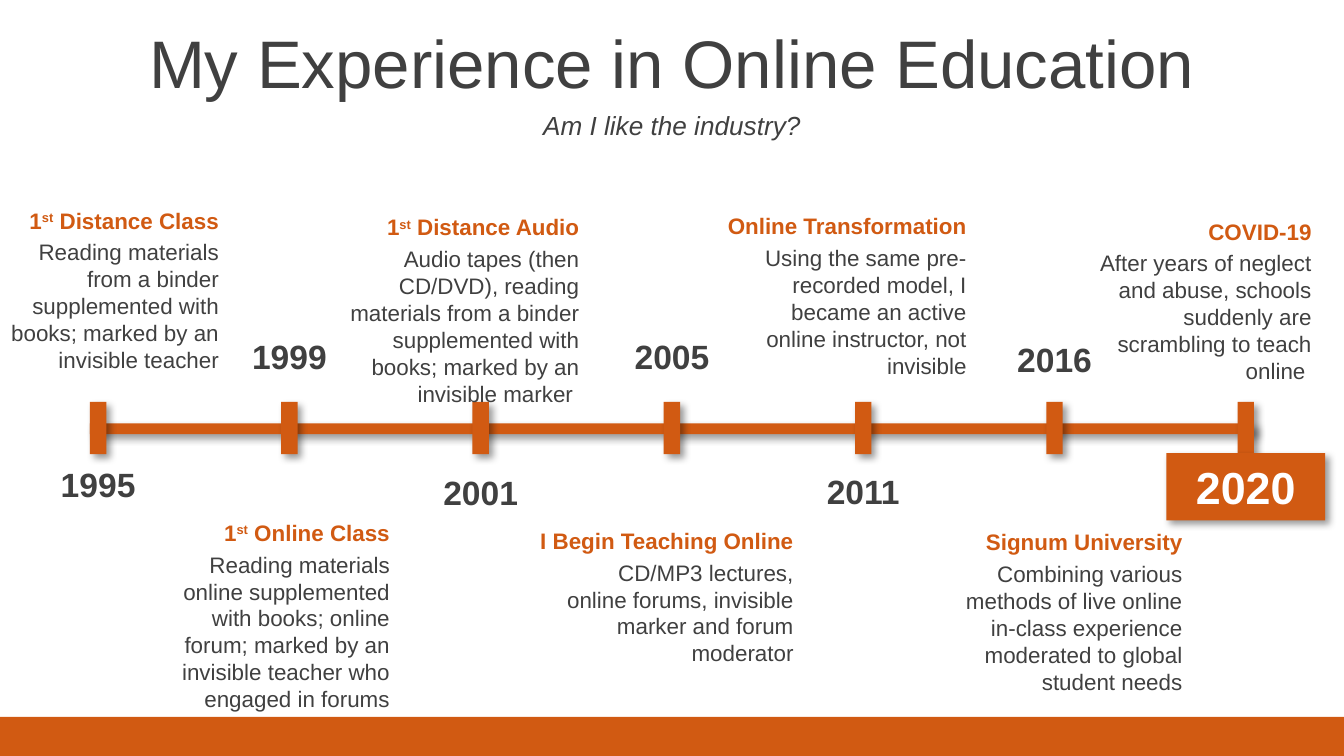
import dataclasses

import lxml.etree
import pptx
import pptx.dml.color
import pptx.enum.shapes
import pptx.enum.text
import pptx.oxml.ns
import pptx.util

Cm = pptx.util.Cm
Pt = pptx.util.Pt
ALIGN = pptx.enum.text.PP_ALIGN
ANCHOR = pptx.enum.text.MSO_ANCHOR
AUTO_SIZE = pptx.enum.text.MSO_AUTO_SIZE

ORANGE = pptx.dml.color.RGBColor(0xD1, 0x5A, 0x12)
GRAY = pptx.dml.color.RGBColor(0x40, 0x40, 0x40)
WHITE = pptx.dml.color.RGBColor(0xFF, 0xFF, 0xFF)

# Formats of the kinds of text
TITLE = {"size": Pt(36), "color": GRAY, "bold": False}
SUBTITLE = {"size": Pt(14), "color": GRAY, "italic": True}
YEAR = {"size": Pt(18), "color": GRAY, "bold": True}
CURRENT_YEAR = {"size": Pt(24), "color": WHITE, "bold": True}
HEADING = {"size": Pt(12), "color": ORANGE, "bold": True}
DESCRIPTION = {"size": Pt(12), "color": GRAY}

# Slide and timeline measures in centimetres
SLIDE_WIDTH, SLIDE_HEIGHT = 25.4, 14.28
FOOTER_TOP = 13.54
FIRST_TICK, LAST_TICK = 1.7, 23.39
TICK_TOP, TICK_WIDTH, TICK_HEIGHT = 7.59, 0.31, 0.99
BAR_TOP, BAR_HEIGHT = 8.0, 0.2
YEAR_WIDTH, YEAR_HEIGHT = 2.26, 1.02
HEADING_HEIGHT, HEADING_STEP = 0.76, 0.6
LINE_HEIGHT, TEXT_MARGIN = 0.51, 0.27


@dataclasses.dataclass
class Event:
    year: str
    year_top: float
    heading: str
    description: str
    right: float
    top: float
    lines: int
    width: float = 5.03
    heading_width: float = 5.03


# A caret encloses superscript text in a heading
EVENTS = [
    Event("1995", 8.64, "1^st^ Distance Class",
          "Reading materials from a binder supplemented with books; "
          "marked by an invisible teacher", 4.39, 3.78, 5, 4.78, 4.78),
    Event("1999", 6.22, "1^st^ Online Class",
          "Reading materials online supplemented with books; online forum; "
          "marked by an invisible teacher who engaged in forums", 7.62, 9.68, 6),
    Event("2001", 8.79, "1^st^ Distance Audio",
          "Audio tapes (then CD/DVD), reading materials from a binder "
          "supplemented with books; marked by an invisible marker ", 11.2, 3.91, 6),
    Event("2005", 6.22, "I Begin Teaching Online",
          "CD/MP3 lectures, online forums, invisible marker and forum moderator",
          15.25, 9.83, 4, heading_width=5.38),
    Event("2011", 8.76, "Online Transformation",
          "Using the same pre-recorded model, I became an active online "
          "instructor, not invisible", 18.52, 3.89, 5, heading_width=5.26),
    Event("2016", 6.27, "Signum University",
          "Combining various methods of live online in-class experience "
          "moderated to global student needs", 22.6, 9.86, 5, heading_width=5.38),
    Event("2020", 8.56, "COVID-19",
          "After years of neglect and abuse, schools suddenly are scrambling "
          "to teach online ", 25.04, 3.99, 5),
]


def write_text(shape, text, style, alignment, anchor, auto_size):
    frame = shape.text_frame
    for name, value in {"word_wrap": True, "auto_size": auto_size,
                        "vertical_anchor": anchor}.items():
        setattr(frame, name, value)
    paragraph = frame.paragraphs[0]
    paragraph.alignment = alignment
    paragraph.space_before = Pt(0)
    for index, part in enumerate(text.split("^")):
        run = paragraph.add_run()
        run.text = part
        run.font.name = "Arial"
        for name, value in style.items():
            if name == "color":
                run.font.color.rgb = value
            else:
                setattr(run.font, name, value)
        if index % 2:
            run.font._element.set("baseline", "30000")


def fill_placeholder(placeholder, top, height, text, style):
    for name, value in {"left": 0, "top": top, "width": SLIDE_WIDTH,
                        "height": height}.items():
        setattr(placeholder, name, Cm(value))
    write_text(placeholder, text, style, ALIGN.CENTER, ANCHOR.MIDDLE, AUTO_SIZE.NONE)


def add_text(shapes, left, top, width, height, text, style,
             alignment=ALIGN.RIGHT, anchor=ANCHOR.TOP):
    box = shapes.add_textbox(Cm(left), Cm(top), Cm(width), Cm(height))
    write_text(box, text, style, alignment, anchor, AUTO_SIZE.SHAPE_TO_FIT_TEXT)


def add_block(slide, left, top, width, height, shadow=True):
    block = slide.shapes.add_shape(pptx.enum.shapes.MSO_SHAPE.RECTANGLE,
                                   Cm(left), Cm(top), Cm(width), Cm(height))
    block.fill.solid()
    block.fill.fore_color.rgb = ORANGE
    block.line.fill.background()
    block.shadow.inherit = False
    if shadow:
        add_shadow(block)
    return block


def add_shadow(shape):
    qn = pptx.oxml.ns.qn
    effects = shape._element.spPr.find(qn("a:effectLst"))
    outer = lxml.etree.SubElement(effects, qn("a:outerShdw"), {
        "blurRad": str(Pt(4)), "dist": str(Pt(3)), "dir": "2700000",
        "algn": "tl", "rotWithShape": "0"})
    color = lxml.etree.SubElement(outer, qn("a:srgbClr"), val="000000")
    lxml.etree.SubElement(color, qn("a:alpha"), val="40000")


def add_timeline(slide, ticks):
    add_block(slide, FIRST_TICK, BAR_TOP,
              LAST_TICK + TICK_WIDTH - FIRST_TICK, BAR_HEIGHT)
    for left in ticks:
        add_block(slide, left, TICK_TOP, TICK_WIDTH, TICK_HEIGHT)


def add_year(slide, event, center):
    if event is EVENTS[-1]:
        width, height = 3.0, 1.27
        block = add_block(slide, center - width / 2, event.year_top, width, height)
        write_text(block, event.year, CURRENT_YEAR, ALIGN.CENTER, ANCHOR.MIDDLE,
                   AUTO_SIZE.SHAPE_TO_FIT_TEXT)
    else:
        add_text(slide.shapes, center - YEAR_WIDTH / 2, event.year_top, YEAR_WIDTH,
                 YEAR_HEIGHT, event.year, YEAR, ALIGN.CENTER, ANCHOR.MIDDLE)


def add_event(slide, event):
    group = slide.shapes.add_group_shape()
    add_text(group.shapes, event.right - event.width, event.top + HEADING_STEP,
             event.width, event.lines * LINE_HEIGHT + TEXT_MARGIN,
             event.description, DESCRIPTION)
    add_text(group.shapes, event.right - event.heading_width, event.top,
             event.heading_width, HEADING_HEIGHT, event.heading, HEADING)


def main():
    presentation = pptx.Presentation()
    presentation.slide_width = Cm(SLIDE_WIDTH)
    presentation.slide_height = Cm(SLIDE_HEIGHT)
    slide = presentation.slides.add_slide(presentation.slide_layouts[0])

    # Footer band and headings
    add_block(slide, 0, FOOTER_TOP, SLIDE_WIDTH, SLIDE_HEIGHT - FOOTER_TOP, shadow=False)
    fill_placeholder(slide.shapes.title, 0.36, 1.6,
                     "My Experience in Online Education", TITLE)
    fill_placeholder(slide.placeholders[1], 1.96, 0.79,
                     "Am I like the industry?", SUBTITLE)

    # Timeline with evenly spaced ticks
    pitch = (LAST_TICK - FIRST_TICK) / (len(EVENTS) - 1)
    ticks = [FIRST_TICK + index * pitch for index in range(len(EVENTS))]
    add_timeline(slide, ticks)

    # Years and what happened in them
    for event, left in zip(EVENTS, ticks):
        add_year(slide, event, left + TICK_WIDTH / 2)
        add_event(slide, event)

    presentation.save("out.pptx")


if __name__ == "__main__":
    main()
